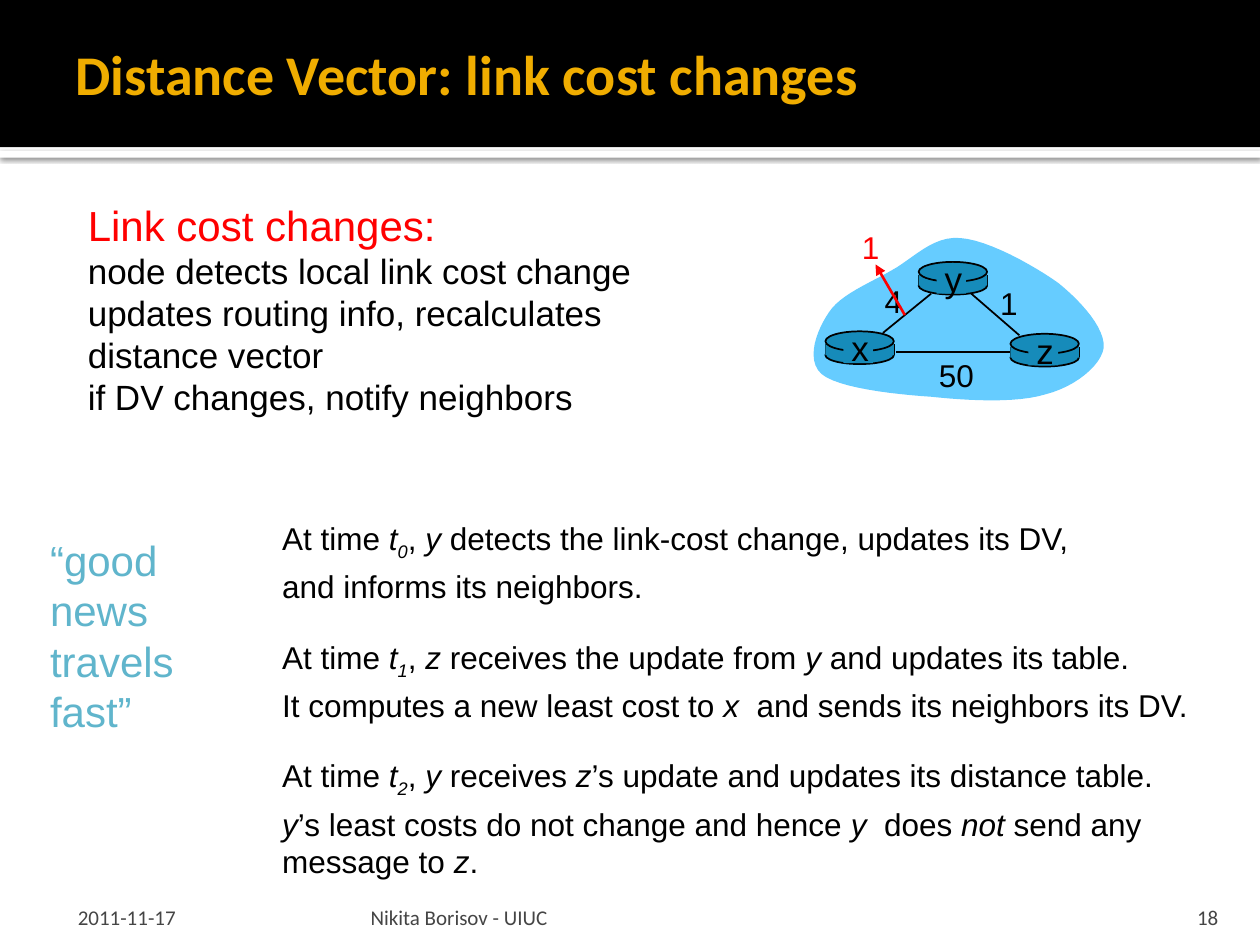
from lxml import etree
from pptx import Presentation
from pptx.dml.color import RGBColor
from pptx.enum.shapes import MSO_CONNECTOR, MSO_SHAPE
from pptx.enum.text import MSO_ANCHOR as ANCHOR, MSO_AUTO_SIZE, PP_ALIGN as ALIGN
from pptx.oxml import parse_xml
from pptx.oxml.ns import nsdecls, qn
from pptx.util import Cm, Pt

BLACK = RGBColor(0x00, 0x00, 0x00)
WHITE = RGBColor(0xFF, 0xFF, 0xFF)
RED = RGBColor(0xFF, 0x00, 0x00)
GOLD = RGBColor(0xF0, 0xAD, 0x00)
TEAL = RGBColor(0x60, 0xB5, 0xCC)
GRAY = RGBColor(0x45, 0x45, 0x45)
SKY = RGBColor(0x66, 0xCC, 0xFF)
ROUTER = RGBColor(0x16, 0x8B, 0xBA)

# Bezier outline of the network: three points for each curve, closed
CLOUD = [(0.48, 1.83),
         (0.71, 1.47), (1.3, 1.24), (1.73, 0.99),
         (2.16, 0.76), (2.57, 0.28), (3.12, 0.33),
         (3.68, 0.36), (4.62, 0.89), (5.11, 1.24),
         (5.59, 1.63), (6.05, 2.16), (6.02, 2.54),
         (5.97, 2.9), (5.44, 3.33), (4.85, 3.48),
         (4.27, 3.66), (3.3, 3.61), (2.54, 3.53),
         (1.78, 3.48), (0.66, 3.35), (0.33, 3.07),
         (0, 2.77), (0.25, 2.16), (0.48, 1.83)]

# Parts between bars are italic; a leading ~ marks a subscript
STEPS = [
    ["At time |t||~0|, |y| detects the link-cost change, updates its DV,",
     "and informs its neighbors."],
    ["At time |t||~1|, |z| receives the update from |y| and updates its table.",
     "It computes a new least cost to |x|  and sends its neighbors its DV."],
    ["At time |t||~2|, |y| receives |z|’s update and updates its distance table.",
     "|y|’s least costs do not change and hence |y|  does |not| send any",
     "message to |z|."],
]


def add_runs(p, text, size, color, font, bold):
    for i, part in enumerate(text.split("|")):
        for j, line in enumerate(part.lstrip("~").split("\n")):
            if j:
                p.add_line_break()
            if not line:
                continue
            r = p.add_run()
            r.text = line
            r.font.size, r.font.name, r.font.bold = Pt(size), font, bold
            r.font.italic = i % 2 == 1
            r.font.color.rgb = color
            if part.startswith("~"):
                r.font._element.set("baseline", "-25000")


def write(tf, text, size=18, color=BLACK, font="Arial", bold=False, align=ALIGN.LEFT,
          leading=1.2, before=0, first=False):
    """Add one paragraph; first=True fills the empty one of a new frame."""
    p = tf.paragraphs[0] if first else tf.add_paragraph()
    p.alignment, p.space_before = align, Pt(before)
    if leading:
        p.line_spacing = Pt(round(size * leading, 1))
    add_runs(p, text, size, color, font, bold)
    return p


def set_box(sp, box, anchor=ANCHOR.TOP, wrap=True, insets=(0.25, 0.13, 0.25, 0.13)):
    sp.left, sp.top, sp.width, sp.height = (Cm(v) for v in box)
    tf = sp.text_frame
    tf.word_wrap, tf.auto_size, tf.vertical_anchor = wrap, MSO_AUTO_SIZE.NONE, anchor
    tf.margin_left, tf.margin_top, tf.margin_right, tf.margin_bottom = (Cm(v) for v in insets)
    return tf


def add_text(s, box, **kw):
    return set_box(s.shapes.add_textbox(0, 0, 0, 0), box, **kw)


def style(sp, fill, line=None):
    sp.shadow.inherit = False
    sp.fill.solid()
    sp.fill.fore_color.rgb = fill
    if line is None:
        sp.line.fill.background()
    else:
        sp.line.color.rgb, sp.line.width = line, Pt(1)


def add_shape(s, kind, box, fill, line=None):
    sp = s.shapes.add_shape(kind, *(Cm(v) for v in box))
    style(sp, fill, line)
    return sp


def add_line(s, x1, y1, x2, y2, color=BLACK, width=1, arrow=False):
    c = s.shapes.add_connector(MSO_CONNECTOR.STRAIGHT, Cm(x1), Cm(y1), Cm(x2), Cm(y2))
    c.line.color.rgb, c.line.width = color, Pt(width)
    if arrow:
        etree.SubElement(c.line._get_or_add_ln(), qn("a:tailEnd"), type="triangle")
    etree.SubElement(c._element.spPr, qn("a:effectLst"))


def add_header(s, x, y, w, h):
    # White rule with its shadow, then the black band
    rule = add_shape(s, MSO_SHAPE.RECTANGLE, (x, y + 3.05, w, 0.13), WHITE)
    effects = rule._element.spPr.find(qn("a:effectLst"))
    effects.append(parse_xml(
        f'<a:outerShdw {nsdecls("a")} blurRad="31750" dist="10160" dir="5400000">'
        '<a:srgbClr val="000000"><a:alpha val="60000"/></a:srgbClr></a:outerShdw>'))
    band = add_shape(s, MSO_SHAPE.RECTANGLE, (x, y, w, h), BLACK)
    # Both lie behind the title
    tree = s.shapes._spTree
    tree.insert(2, rule._element)
    tree.insert(3, band._element)
    tf = set_box(s.shapes.title, (x + 1.27, y + 0.2, 22.86, 2.54), anchor=ANCHOR.MIDDLE,
                 insets=(0.25, 0.13, 0.13, 0.13))
    write(tf, "Distance Vector: link cost changes", size=32, color=GOLD, font="Calibri",
          bold=True, leading=None, first=True)


def add_list(s, box):
    tf = set_box(s.placeholders[1], box)
    write(tf, "Link cost changes:", size=24, color=RED, first=True)
    for item in ("node detects local link cost change",
                 "updates routing info, recalculates \ndistance vector",
                 "if DV changes, notify neighbors"):
        write(tf, item, size=20)
    for p in tf.paragraphs:
        pPr = p._p.get_or_add_pPr()
        pPr.set("marL", "0")
        pPr.set("indent", "0")
        etree.SubElement(pPr, qn("a:buNone"))


def add_label(s, x, y, w, text, size=18, color=BLACK):
    tf = add_text(s, (x, y, w, 1.05), wrap=False)
    write(tf, text, size=size, color=color, align=ALIGN.CENTER, first=True)


def add_router(s, x, y, name):
    w = 1.38
    add_shape(s, MSO_SHAPE.OVAL, (x, y + 0.3, w, 0.36), ROUTER, BLACK)
    for side in (x, x + w):
        add_line(s, side, y + 0.26, side, y + 0.47)
    add_shape(s, MSO_SHAPE.RECTANGLE, (x, y + 0.26, w, 0.22), ROUTER)
    add_shape(s, MSO_SHAPE.OVAL, (x, y, w, 0.4), ROUTER, BLACK)
    add_shape(s, MSO_SHAPE.RECTANGLE, (x + 0.36, y + 0.06, 0.6, 0.58), ROUTER)
    add_label(s, x + 0.27, y - 0.22, 0.86, name, size=20)


def bezier(a, b, c, d, steps=12):
    for t in (i / steps for i in range(1, steps + 1)):
        u = 1 - t
        yield tuple(u**3 * k + 3 * u * u * t * m + 3 * u * t * t * n + t**3 * q
                    for k, m, n, q in zip(a, b, c, d))


def add_network(s, x, y):
    # Cloud
    pts = [pt for i in range(0, len(CLOUD) - 1, 3) for pt in bezier(*CLOUD[i:i + 4])]
    pts = [(Cm(x + px), Cm(y + py)) for px, py in pts]
    fb = s.shapes.build_freeform(*pts[-1])
    fb.add_line_segments(pts[:-1], close=True)
    style(fb.convert_to_shape(), SKY)
    # Links, routers and costs
    for x1, y1, x2, y2 in ((1.57, 2.24, 2.54, 1.45), (3.35, 1.45, 4.32, 2.29),
                           (1.83, 2.62, 4.22, 2.62)):
        add_line(s, x + x1, y + y1, x + x2, y + y2)
    for name, dx, dy in (("x", 0.41, 2.21), ("z", 4.14, 2.26), ("y", 2.29, 0.81)):
        add_router(s, x + dx, y + dy, name)
    for cost, dx, dy, w, color in (("1", 3.68, 1.12, 0.86, BLACK), ("4", 1.35, 1.09, 0.86, BLACK),
                                   ("50", 2.44, 2.57, 1.22, BLACK), ("1", 0.89, 0, 0.86, RED)):
        add_label(s, x + dx, y + dy, w, cost, color=color)
    # Changed cost
    add_line(s, x + 2.01, y + 1.88, x + 1.42, y + 0.86, RED, 1.5, arrow=True)


def add_motto(s, box):
    tf = add_text(s, box, wrap=False)
    for i, word in enumerate(("“good", "news", "travels", "fast”")):
        write(tf, word, size=24, color=TEAL, first=i == 0)


def add_steps(s, box):
    tf = add_text(s, box, wrap=False)
    for i, step in enumerate(STEPS):
        for j, line in enumerate(step):
            p = write(tf, line, before=21.6 if i and not j else 0, first=i == j == 0)
            if j == 0:
                p.space_after = Pt(3)  # room for the subscript


def add_footer(s, y, h):
    for text, x, w, inset, align in (
            ("2011-11-17", 1.27, 5.92, 0.3, ALIGN.LEFT),
            ("Nikita Borisov - UIUC", 7.34, 15.29, 0.13, ALIGN.LEFT),
            ("18", 22.78, 2.03, 0.25, ALIGN.RIGHT)):
        right = 0.25 if align == ALIGN.RIGHT else 0.13
        tf = add_text(s, (x, y, w, h), anchor=ANCHOR.BOTTOM, insets=(inset, 0.13, right, 0))
        write(tf, text, size=12, color=GRAY, font="Calibri", align=align, leading=None, first=True)


def main():
    prs = Presentation()
    prs.slide_width, prs.slide_height = Cm(25.4), Cm(19.05)
    s = prs.slides.add_slide(prs.slide_layouts[1])
    add_header(s, 0, 0, 25.4, 2.97)
    add_list(s, (1.52, 3.89, 13.51, 7.01))
    add_motto(s, (0.76, 10.64, 3, 4.32))
    add_network(s, 16.23, 4.47)
    add_steps(s, (5.44, 10.44, 18.82, 7.87))
    add_footer(s, 17.98, 0.76)
    prs.save("out.pptx")


if __name__ == "__main__":
    main()
